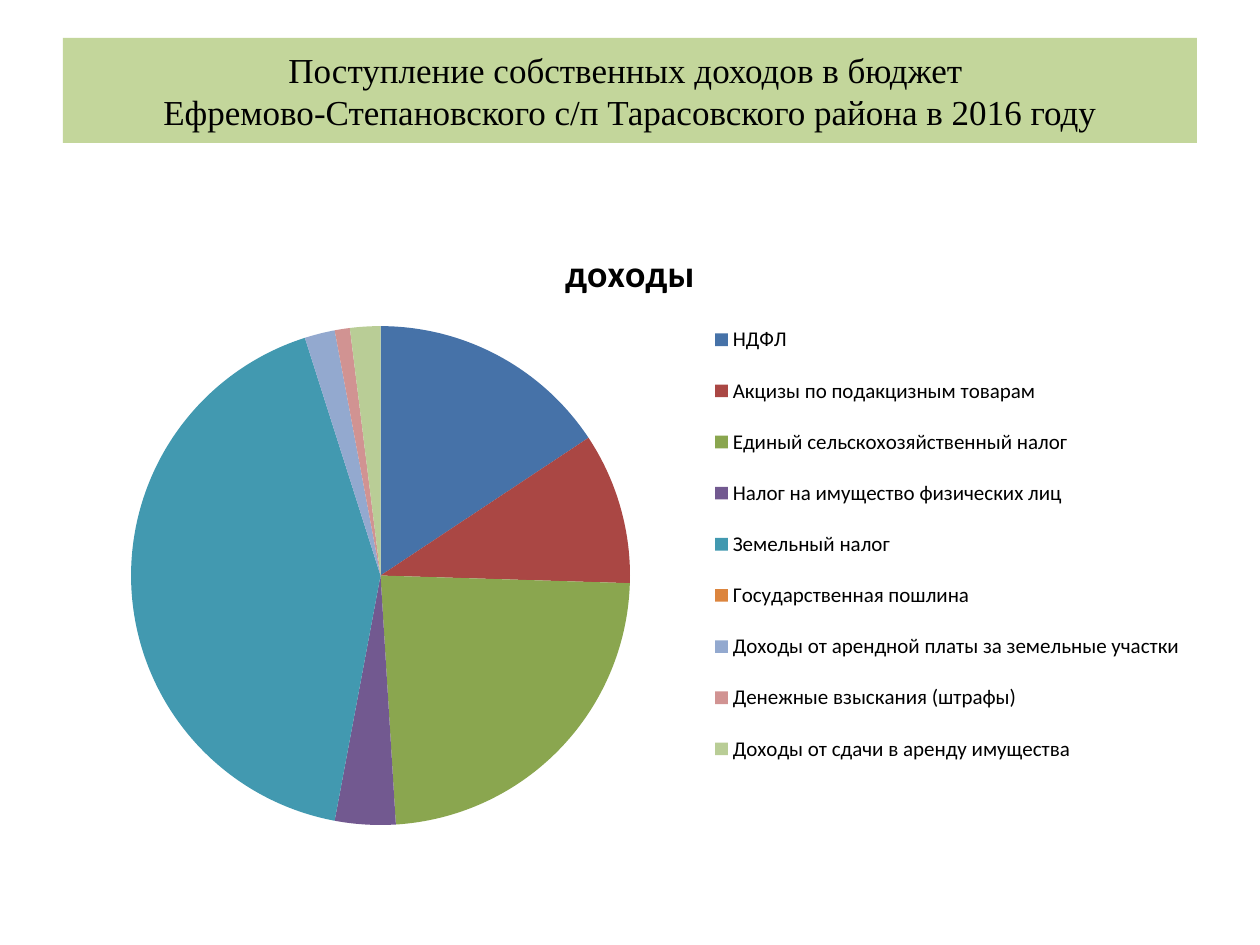
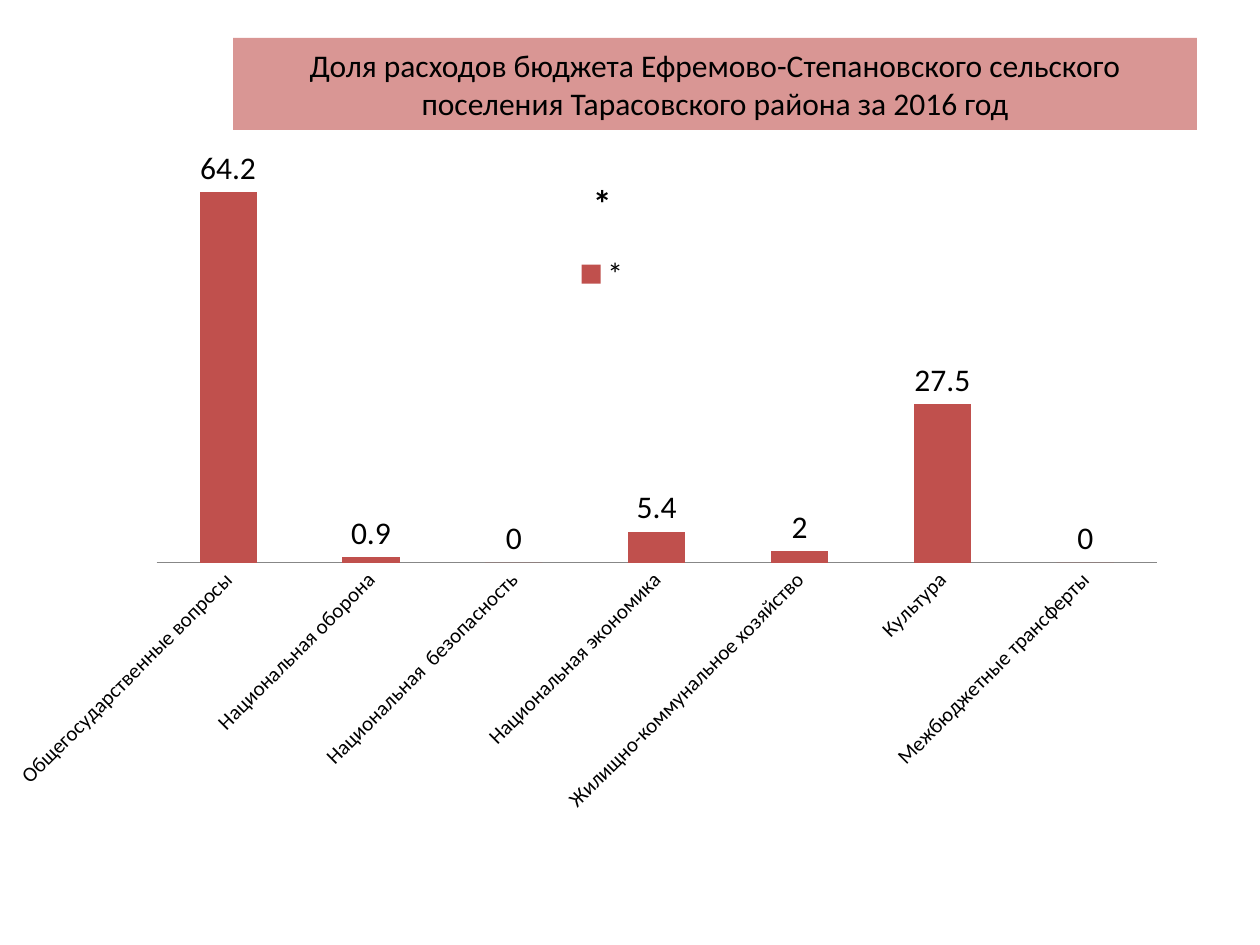
from dataclasses import dataclass

from lxml import etree
from pptx import Presentation
from pptx.chart.data import CategoryChartData
from pptx.dml.color import RGBColor
from pptx.enum.chart import XL_CHART_TYPE, XL_LABEL_POSITION, XL_LEGEND_POSITION
from pptx.enum.chart import XL_TICK_MARK
from pptx.enum.shapes import MSO_SHAPE
from pptx.enum.text import MSO_ANCHOR, PP_ALIGN
from pptx.oxml.ns import qn
from pptx.util import Emu, Pt

PIE = XL_CHART_TYPE.PIE
COLUMN = XL_CHART_TYPE.COLUMN_CLUSTERED
RIGHT = XL_LEGEND_POSITION.RIGHT
TOP = XL_LEGEND_POSITION.TOP
ABOVE = XL_LABEL_POSITION.OUTSIDE_END
NO_TICK = XL_TICK_MARK.NONE
RECT = MSO_SHAPE.RECTANGLE
MIDDLE = MSO_ANCHOR.MIDDLE
CENTER = PP_ALIGN.CENTER

DPI = 126
BLANK = 6


@dataclass(frozen=True)
class Theme:
    ink: str = "000000"
    green: str = "C3D69B"
    rose: str = "D99694"
    bar: str = "C0504D"
    axis: str = "878787"
    slices: tuple = ("4672A8", "AA4744", "8AA64F", "725990", "4299B0",
                     "DC853E", "93A9CF", "D19392", "B9CD96")
    sans: str = "Calibri"
    serif: str = "Times New Roman"
    large: int = 20
    body: int = 18
    small: int = 12
    head: float = 21.6


THEME = Theme()

INCOME = {
    "НДФЛ": 16,
    "Акцизы по подакцизным товарам": 10,
    "Единый сельскохозяйственный налог": 24,
    "Налог на имущество физических лиц": 4,
    "Земельный налог": 43,
    "Государственная пошлина": 0,
    "Доходы от арендной платы за земельные участки": 2,
    "Денежные взыскания (штрафы)": 1,
    "Доходы от сдачи в аренду имущества": 2,
}
SPENDING = {
    "Общегосударственные вопросы": 64.2,
    "Национальная оборона": 0.9,
    "Национальная  безопасность": 0,
    "Национальная экономика": 5.4,
    "Жилищно-коммунальное хозяйство": 2,
    "Культура": 27.5,
    "Межбюджетные трансферты": 0,
}


def px(count):
    return Emu(round(count * 914400 / DPI))


def color(code):
    return RGBColor.from_string(code)


def paint(fmt, code):
    fmt.fill.solid()
    fmt.fill.fore_color.rgb = color(code)


def style(font, size, face=THEME.sans, bold=False):
    font.name = face
    font.size = Pt(size)
    font.bold = bold
    font.color.rgb = color(THEME.ink)


def add_band(slide, box, text, fill, size, face):
    """Draw the filled title band of a slide."""
    band = slide.shapes.add_shape(RECT, *map(px, box))
    band.shadow.inherit = False
    paint(band, fill)
    band.line.fill.background()
    frame = band.text_frame
    frame.word_wrap = True
    frame.vertical_anchor = MIDDLE
    line = frame.paragraphs[0]
    line.text = text
    line.alignment = CENTER
    for run in line.runs:
        style(run.font, size, face)


def add_graph(slide, kind, box, name, data, place, size):
    """Add a titled chart with one series and a legend."""
    source = CategoryChartData()
    source.categories = list(data)
    source.add_series(name, list(data.values()))
    chart = slide.shapes.add_chart(kind, *map(px, box), source).chart
    style(chart.font, THEME.body)
    chart.has_title = True
    title = chart.chart_title.text_frame
    title.text = name
    style(title.paragraphs[0].runs[0].font, THEME.head, bold=True)
    chart.has_legend = True
    chart.legend.position = place
    chart.legend.include_in_layout = False
    style(chart.legend.font, size)
    return chart


def set_place(part, spot, inner=False):
    """Fix a chart part at x, y, w, h, given as shares of the chart."""
    for old in part.findall(qn("c:layout")):
        part.remove(old)
    layout = etree.Element(qn("c:layout"))
    manual = etree.SubElement(layout, qn("c:manualLayout"))
    pairs = [("layoutTarget", "inner")] if inner else []
    pairs += [("xMode", "edge"), ("yMode", "edge"), *zip("xywh", spot)]
    for tag, value in pairs:
        etree.SubElement(manual, qn("c:" + tag)).set("val", str(value))
    part.insert(0 if inner else 1, layout)


def add_pie(slide, box, name, data):
    chart = add_graph(slide, PIE, box, name, data, RIGHT, THEME.small)
    plot = chart.plots[0]
    plot.vary_by_categories = True
    for index, code in enumerate(THEME.slices):
        paint(plot.series[0].points[index].format, code)
    area = chart.element.find(".//" + qn("c:plotArea"))
    set_place(area, (0.06, 0.17, 0.44, 0.8), inner=True)
    legend = chart.element.find(".//" + qn("c:legend"))
    set_place(legend, (0.57, 0.13, 0.42, 0.78))


def add_bars(slide, box, name, data):
    chart = add_graph(slide, COLUMN, box, name, data, TOP, THEME.body)
    plot = chart.plots[0]
    plot.vary_by_categories = False
    plot.gap_width = 150
    paint(plot.series[0].format, THEME.bar)
    plot.has_data_labels = True
    labels = plot.data_labels
    labels.show_value = True
    labels.position = ABOVE
    style(labels.font, THEME.body)
    chart.value_axis.visible = False
    chart.value_axis.has_major_gridlines = False
    axis = chart.category_axis
    axis.major_tick_mark = NO_TICK
    axis.format.line.color.rgb = color(THEME.axis)
    style(axis.tick_labels.font, THEME.small)
    body = chart.element.find(".//" + qn("c:catAx")).find(".//" + qn("a:bodyPr"))
    body.set("rot", "-2700000")
    area = chart.element.find(".//" + qn("c:plotArea"))
    set_place(area, (0.13, 0.015, 0.83, 0.506), inner=True)


def main():
    deck = Presentation()
    deck.slide_width, deck.slide_height = px(1260), px(945)
    income, costs = (deck.slides.add_slide(deck.slide_layouts[BLANK])
                     for _ in range(2))

    add_band(income, (63, 38, 1134, 105),
             "Поступление собственных доходов в бюджет \v"
             "Ефремово-Степановского с/п Тарасовского района в 2016 году",
             THEME.green, THEME.large, THEME.serif)
    add_pie(income, (63, 220, 1134, 624), "доходы", INCOME)

    add_band(costs, (233, 38, 964, 92),
             "Доля расходов бюджета Ефремово-Степановского сельского "
             "поселения Тарасовского района за 2016 год",
             THEME.rose, THEME.body, THEME.sans)
    add_bars(costs, (0, 147, 1205, 798), "*", SPENDING)
    deck.save("out.pptx")


if __name__ == "__main__":
    main()
